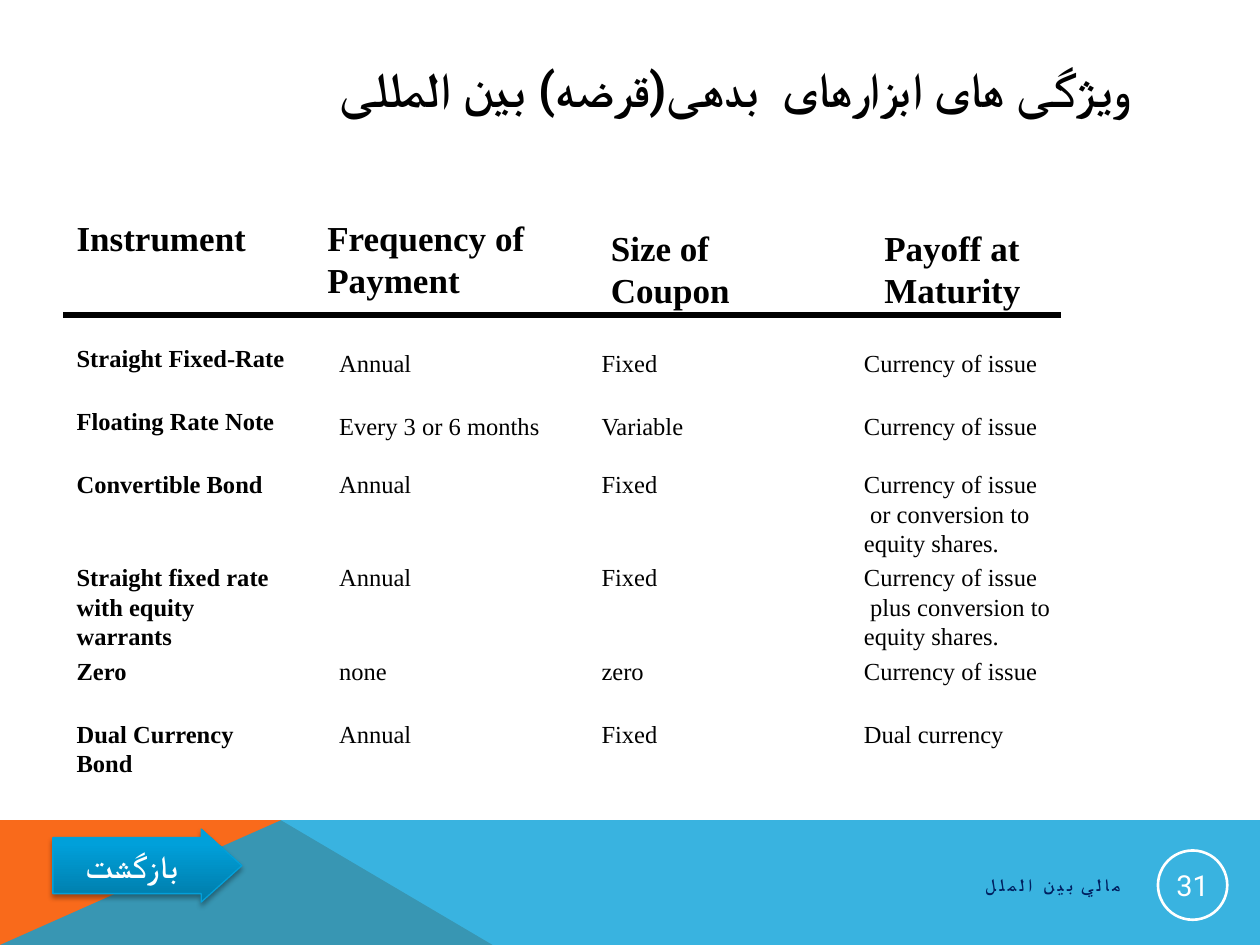
from lxml.etree import SubElement
from pptx import Presentation
from pptx.dml.color import RGBColor
from pptx.enum.shapes import MSO_CONNECTOR, MSO_SHAPE
from pptx.enum.text import MSO_ANCHOR, MSO_AUTO_SIZE, PP_ALIGN
from pptx.oxml.ns import qn
from pptx.util import Inches, Pt

BLACK = RGBColor(0x00, 0x00, 0x00)
WHITE = RGBColor(0xFF, 0xFF, 0xFF)
NAVY = RGBColor(0x00, 0x20, 0x60)
ORANGE = RGBColor(0xF9, 0x6A, 0x1B)
BLUE = RGBColor(0x08, 0xA1, 0xD9)
ARROW_DARK = RGBColor(0x00, 0x7B, 0xA8)
ARROW_LIGHT = RGBColor(0x00, 0xA0, 0xDA)
ARROW_EDGE = RGBColor(0x03, 0xA0, 0xD9)
SANS, SERIF = "Roboto", "Times New Roman"

TITLE = "ویژگی های ابزارهای  بدهی(قرضه) بین المللی"
FOOTER = "مالي بين الملل"
BACK = "بازگشت"
PAGE = "31"

# text, left, top, width
HEADERS = [
    ("Instrument", 0.51, 1.67, 1.9),
    ("Frequency of Payment", 2.5, 1.67, 2),
    ("Size of Coupon", 4.75, 1.75, 1.83),
    ("Payoff at Maturity", 6.92, 1.75, 1.83),
]
# row height, then instrument, frequency, coupon, payoff
ROWS = [
    (0.5, "Straight Fixed-Rate", "Annual", "Fixed", "Currency of issue"),
    (0.5, "Floating Rate Note", "Every 3 or 6 months", "Variable", "Currency of issue"),
    (0.74, "Convertible Bond", "Annual", "Fixed",
     "Currency of issue\n or conversion to equity shares."),
    (0.74, "Straight fixed rate with equity warrants", "Annual", "Fixed",
     "Currency of issue\n plus conversion to equity shares."),
    (0.5, "Zero", "none", "zero", "Currency of issue"),
    (0.5, "Dual Currency Bond", "Annual", "Fixed", "Dual currency"),
]
TABLE_LEFT, TABLE_TOP, COL_STEP, CELL_W = 0.51, 2.675, 2.083, 1.9
LOOSE_ROWS, LOOSE_DROP = 2, 0.035  # the first rows' values sit a little lower
BAND_TOP, BAND_PEAK, BAND_FOOT = 6.51, 2.23, 3.91


def write(sp, text, size, font=SERIF, color=BLACK, bold=False, align=PP_ALIGN.LEFT,
          anchor=MSO_ANCHOR.TOP, rtl=False, spacing=0):
    tf = sp.text_frame
    tf.word_wrap = True
    tf.auto_size = MSO_AUTO_SIZE.NONE
    tf.vertical_anchor = anchor
    for i, line in enumerate(text.split("\n")):
        p = tf.add_paragraph() if i else tf.paragraphs[0]
        p.alignment = align
        if rtl:
            p._p.get_or_add_pPr().set("rtl", "1")
        r = p.add_run()
        r.text = line
        r.font.size, r.font.bold, r.font.name = Pt(size), bold, font
        r.font.color.rgb = color
        rPr = r.font._element
        SubElement(rPr, qn("a:cs")).set("typeface", font)
        if spacing:
            rPr.set("spc", str(spacing * 100))


def add_text(shapes, text, left, top, width, height, size, **fmt):
    sp = shapes.add_textbox(Inches(left), Inches(top), Inches(width), Inches(height))
    write(sp, text, size, **fmt)


def add_band(shapes, points, color, opacity=100):
    points = [(Inches(x), Inches(y)) for x, y in points]
    builder = shapes.build_freeform(*points[0])
    builder.add_line_segments(points[1:], close=True)
    sp = builder.convert_to_shape()
    sp.shadow.inherit = False
    sp.line.fill.background()
    sp.fill.solid()
    sp.fill.fore_color.rgb = color
    if opacity < 100:
        clr = sp._element.spPr.find(qn("a:solidFill"))[0]
        SubElement(clr, qn("a:alpha")).set("val", str(opacity * 1000))


def add_back_arrow(shapes):
    sp = shapes.add_shape(MSO_SHAPE.RIGHT_ARROW, Inches(0.42), Inches(6.58),
                          Inches(1.5), Inches(0.58))
    sp.adjustments[0], sp.adjustments[1] = 0.767, 0.557
    sp.fill.gradient()
    sp.fill.gradient_angle = 90
    stops = zip(sp.fill.gradient_stops, ((0, ARROW_DARK), (0.8, ARROW_LIGHT)))
    for stop, (position, color) in stops:
        stop.position, stop.color.rgb = position, color
    sp.line.color.rgb = ARROW_EDGE
    sp.line.width = Pt(0.75)
    sp.shadow.inherit = False
    effects = sp._element.spPr.find(qn("a:effectLst"))
    shadow = SubElement(effects, qn("a:outerShdw"), blurRad=str(Pt(3.1)),
                        dist=str(Pt(1.8)), dir="5400000", rotWithShape="0")
    clr = SubElement(shadow, qn("a:srgbClr"), val="000000")
    SubElement(clr, qn("a:alpha"), val="35000")
    write(sp, BACK, 18, font=SANS, color=WHITE, bold=True,
          align=PP_ALIGN.CENTER, anchor=MSO_ANCHOR.MIDDLE)


def add_page_number(shapes):
    sp = shapes.add_shape(MSO_SHAPE.OVAL, Inches(9.19), Inches(6.75),
                          Inches(0.55), Inches(0.55))
    sp.shadow.inherit = False
    sp.fill.background()
    sp.line.color.rgb = WHITE
    sp.line.width = Pt(1.5)
    tf = sp.text_frame
    tf.margin_left = tf.margin_right = tf.margin_top = tf.margin_bottom = Inches(0.01)
    write(sp, PAGE, 16.5, font=SANS, color=WHITE,
          align=PP_ALIGN.CENTER, anchor=MSO_ANCHOR.MIDDLE)


def add_comparison(shapes):
    for text, left, top, width in HEADERS:
        add_text(shapes, text, left, top, width, 0.77, 20, bold=True)
    top = TABLE_TOP
    for i, (height, *cells) in enumerate(ROWS):
        for j, text in enumerate(cells):
            drop = LOOSE_DROP if i < LOOSE_ROWS and j else 0
            width = 2.2 if drop else CELL_W
            add_text(shapes, text, TABLE_LEFT + j * COL_STEP, top + drop,
                     width, height - drop, 14, bold=j == 0)
        top += height
    rule = shapes.add_connector(MSO_CONNECTOR.STRAIGHT, Inches(0.5), Inches(2.5),
                                Inches(8.42), Inches(2.5))
    rule.line.color.rgb = BLACK
    rule.line.width = Pt(3)
    SubElement(rule._element.spPr, qn("a:effectLst"))


def main():
    prs = Presentation()
    prs.slide_width, prs.slide_height = Inches(10), Inches(7.5)
    s = prs.slides.add_slide(prs.slide_layouts[5])
    shapes = s.shapes

    add_band(shapes, [(0, 7.5), (0, BAND_TOP), (BAND_PEAK, BAND_TOP), (BAND_FOOT, 7.5)],
             ORANGE)
    add_band(shapes, [(0, 7.5), (BAND_PEAK, BAND_TOP), (10, BAND_TOP), (10, 7.5)],
             BLUE, opacity=80)
    add_back_arrow(shapes)

    title = shapes.title
    title.left, title.top = Inches(1.5), Inches(0.4)
    title.width, title.height = Inches(7.58), Inches(0.6)
    write(title, TITLE, 28, font=SANS, bold=True, align=PP_ALIGN.RIGHT,
          anchor=MSO_ANCHOR.MIDDLE, rtl=True)

    add_text(shapes, FOOTER, 3.85, 6.87, 5.17, 0.3, 10, font=SANS, color=NAVY, bold=True,
             align=PP_ALIGN.RIGHT, anchor=MSO_ANCHOR.MIDDLE, spacing=2)
    add_page_number(shapes)
    add_comparison(shapes)
    prs.save("out.pptx")


if __name__ == "__main__":
    main()
